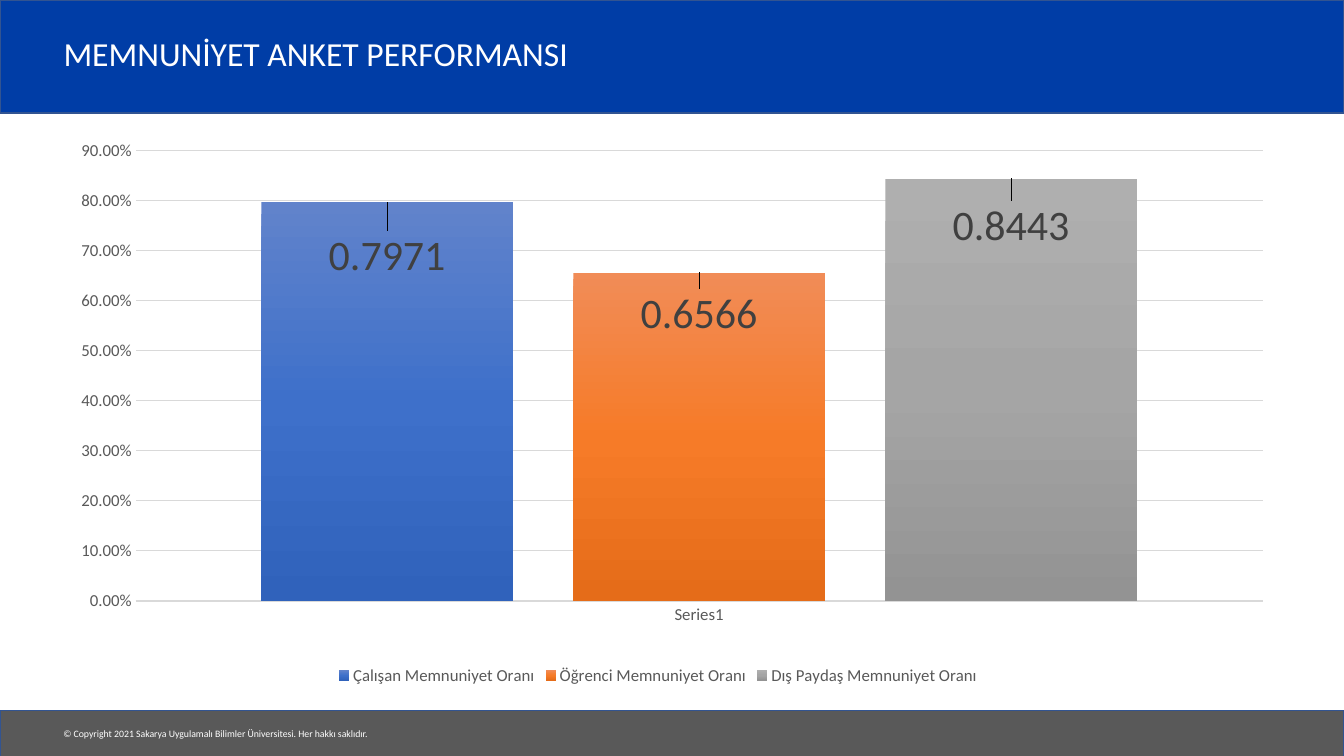
from dataclasses import dataclass

from lxml import etree
from pptx import Presentation
from pptx.chart.data import CategoryChartData
from pptx.dml.color import RGBColor
from pptx.enum.chart import XL_CHART_TYPE, XL_LABEL_POSITION, XL_LEGEND_POSITION, XL_TICK_MARK
from pptx.enum.shapes import MSO_SHAPE
from pptx.enum.text import MSO_ANCHOR, PP_ALIGN
from pptx.oxml import parse_xml
from pptx.oxml.ns import nsdecls, qn
from pptx.util import Inches, Pt

COLUMNS = XL_CHART_TYPE.COLUMN_CLUSTERED
INSIDE_END = XL_LABEL_POSITION.INSIDE_END
LEGEND_BOTTOM = XL_LEGEND_POSITION.BOTTOM
NO_TICK = XL_TICK_MARK.NONE
RECTANGLE = MSO_SHAPE.RECTANGLE
MIDDLE = MSO_ANCHOR.MIDDLE
LEFT = PP_ALIGN.LEFT


@dataclass(frozen=True)
class Theme:
    font: str = "Calibri"
    white: str = "FFFFFF"
    blue: str = "003DA6"
    dark_grey: str = "595959"
    band_line: str = "325491"
    grid: str = "D9D9D9"
    label: str = "404040"
    title_size: int = 24
    footer_size: int = 7
    axis_size: int = 12
    value_size: int = 30


@dataclass(frozen=True)
class Band:
    top: float
    height: float
    color: str


@dataclass(frozen=True)
class Survey:
    name: str
    rate: float
    gradient: tuple[str, str, str]
    label_drop: float  # share of the chart height


THEME = Theme()
SLIDE_WIDTH, SLIDE_HEIGHT = 13.33, 7.5
MARGIN = 0.53
PLOT_AREA = {"x": 0.068, "y": 0.099, "w": 0.932, "h": 0.753}
BANDS = [Band(0, 1.12, THEME.blue), Band(7.05, 0.46, THEME.dark_grey)]
SURVEYS = [
    Survey("Çalışan Memnuniyet Oranı", 0.7971, ("6183CB", "3E70CA", "3062BB"), 0.04),
    Survey("Öğrenci Memnuniyet Oranı", 0.6566, ("F18C57", "F67B28", "E56C19"), 0.02),
    Survey("Dış Paydaş Memnuniyet Oranı", 0.8443, ("AFAFAF", "A5A5A5", "939393"), 0.03),
]


def style_font(font, size: float, color: str) -> None:
    font.name = THEME.font
    font.size = Pt(size)
    font.color.rgb = RGBColor.from_string(color)


def style_line(line, color: str, width: float) -> None:
    line.color.rgb = RGBColor.from_string(color)
    line.width = Pt(width)


def add_band(slide, band: Band) -> None:
    shape = slide.shapes.add_shape(
        RECTANGLE, 0, Inches(band.top), Inches(SLIDE_WIDTH), Inches(band.height))
    shape.shadow.inherit = False
    shape.fill.solid()
    shape.fill.fore_color.rgb = RGBColor.from_string(band.color)
    style_line(shape.line, THEME.band_line, 1)


def write_text(box, text: str, size: float) -> None:
    para = box.text_frame.paragraphs[0]
    para.alignment = LEFT
    span = para.add_run()
    span.text = text
    style_font(span.font, size, THEME.white)


def add_title(slide, text: str) -> None:
    title = slide.shapes.title
    slide.shapes._spTree.append(title._element)  # bring in front of the bands
    title.left, title.top = Inches(MARGIN), Inches(0.19)
    title.width, title.height = Inches(11.03), Inches(0.73)
    title.text_frame.vertical_anchor = MIDDLE
    write_text(title, text, THEME.title_size)
    title.text_frame.paragraphs[0].line_spacing = 0.9


def add_footer(slide, text: str) -> None:
    box = slide.shapes.add_textbox(Inches(MARGIN), Inches(7.17), Inches(3.29), Inches(0.22))
    box.text_frame.word_wrap = False
    write_text(box, text, THEME.footer_size)


def manual_layout(places: dict[str, float], inner: bool = False) -> etree._Element:
    target = '<c:layoutTarget val="inner"/>' if inner else ""
    modes = '<c:xMode val="edge"/><c:yMode val="edge"/>' if inner else ""
    values = "".join(f'<c:{key} val="{value}"/>' for key, value in places.items())
    return parse_xml(f'<c:layout {nsdecls("c")}><c:manualLayout>{target}{modes}{values}'
                     "</c:manualLayout></c:layout>")


def style_series(series, survey: Survey) -> None:
    # Vertical three-stop gradient
    stops = "".join(f'<a:gs pos="{index * 50000}"><a:srgbClr val="{color}"/></a:gs>'
                    for index, color in enumerate(survey.gradient))
    series._element.get_or_add_spPr().insert(0, parse_xml(
        f'<a:gradFill {nsdecls("a")} rotWithShape="1"><a:gsLst>{stops}</a:gsLst>'
        '<a:lin ang="5400000" scaled="0"/></a:gradFill>'))

    # Value label, lowered from the column's top
    label = series.points[0].data_label
    style_font(label.font, THEME.value_size, THEME.label)
    label.position = INSIDE_END
    index = series._element.find(f".//{qn('c:dLbl')}/{qn('c:idx')}")
    index.addnext(parse_xml(
        f'<c:numFmt {nsdecls("c")} formatCode="General" sourceLinked="0"/>'))
    index.addnext(manual_layout({"x": 0, "y": survey.label_drop}))


def add_survey_chart(slide) -> None:
    data = CategoryChartData()
    data.categories = ["Series1"]
    for survey in SURVEYS:
        data.add_series(survey.name, [survey.rate])
    chart = slide.shapes.add_chart(
        COLUMNS, Inches(MARGIN), Inches(0.91), Inches(12), Inches(5.93), data).chart
    chart.has_title = False
    style_font(chart.font, THEME.axis_size, THEME.dark_grey)

    # Columns
    plot = chart.plots[0]
    plot.vary_by_categories = False
    plot.gap_width, plot.overlap = 100, -24
    for series, survey in zip(plot.series, SURVEYS):
        style_series(series, survey)

    # Axes
    for axis in (chart.category_axis, chart.value_axis):
        axis.major_tick_mark = axis.minor_tick_mark = NO_TICK
        style_font(axis.tick_labels.font, THEME.axis_size, THEME.dark_grey)
    style_line(chart.category_axis.format.line, THEME.grid, 1)
    rates = chart.value_axis
    rates.minimum_scale, rates.maximum_scale, rates.major_unit = 0, 0.9, 0.1
    rates.format.line.fill.background()
    style_line(rates.major_gridlines.format.line, THEME.grid, 0.75)
    rates.tick_labels.number_format = "0.00%"
    rates.tick_labels.number_format_is_linked = False

    # Legend and plot area
    chart.has_legend = True
    chart.legend.position = LEGEND_BOTTOM
    chart.legend.include_in_layout = False
    style_font(chart.legend.font, THEME.axis_size, THEME.dark_grey)
    area = chart._chartSpace.find(f".//{qn('c:plotArea')}")
    for layout in area.findall(qn("c:layout")):
        area.remove(layout)
    area.insert(0, manual_layout(PLOT_AREA, inner=True))


def main() -> None:
    deck = Presentation()
    deck.slide_width, deck.slide_height = Inches(SLIDE_WIDTH), Inches(SLIDE_HEIGHT)
    page = deck.slides.add_slide(deck.slide_layouts[5])
    for band in BANDS:
        add_band(page, band)
    add_footer(page, "© Copyright 2021 Sakarya Uygulamalı Bilimler Üniversitesi. "
                     "Her hakkı saklıdır.")
    add_title(page, "MEMNUNİYET ANKET PERFORMANSI")
    add_survey_chart(page)
    deck.save("out.pptx")


if __name__ == "__main__":
    main()
